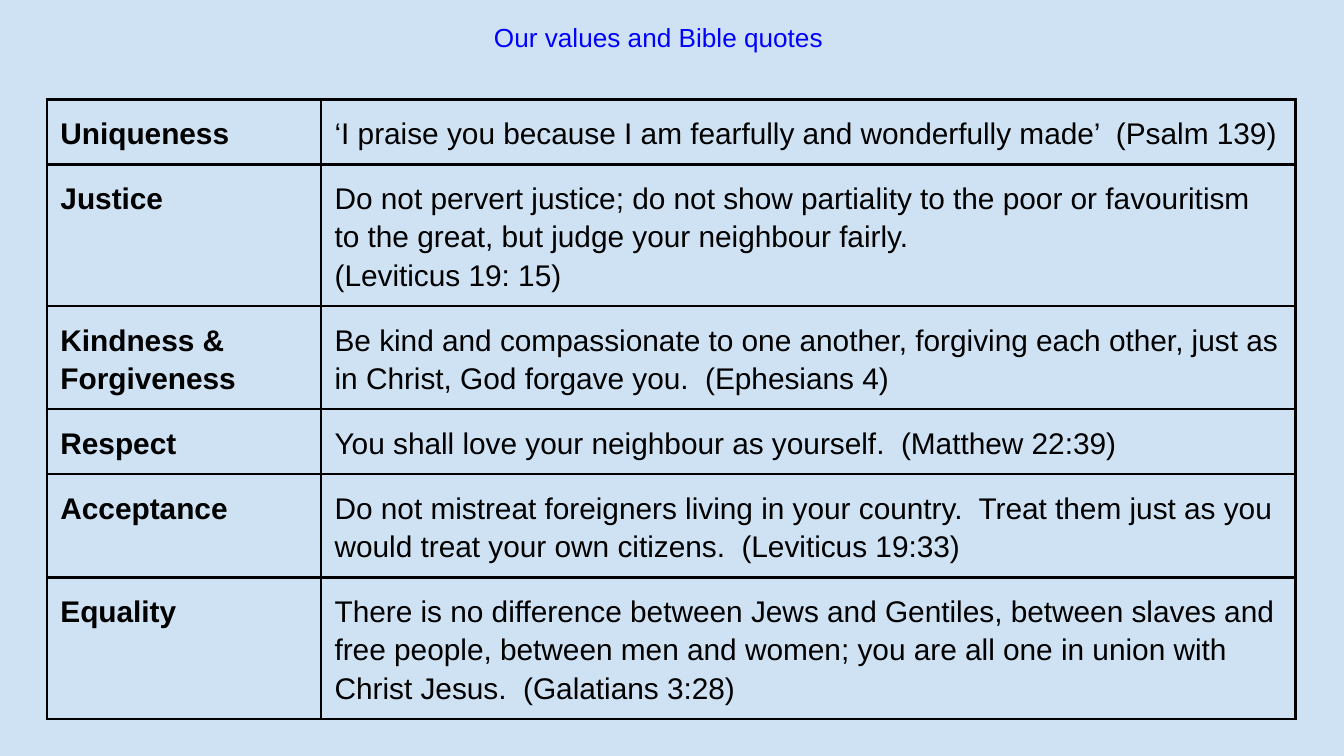
from typing import NamedTuple

from lxml import etree
from pptx import Presentation
from pptx.dml.color import RGBColor
from pptx.enum.text import MSO_ANCHOR, MSO_AUTO_SIZE, PP_ALIGN
from pptx.oxml.ns import qn
from pptx.util import Inches, Pt

TOP = MSO_ANCHOR.TOP
NO_FIT = MSO_AUTO_SIZE.NONE
CENTER = PP_ALIGN.CENTER
TITLE_ONLY = 5

FONT = "Arial"
BACKGROUND = "CFE2F3"
BLACK = "000000"
BLUE = "0000FF"
PAGE_WIDTH = 10
COLUMN_WIDTHS = (2.04, 7.25)
ROW_HEIGHT = 0.42
CELL_MARGIN = 0.1
BORDER_WIDTH = 1.5


class Value(NamedTuple):
    name: str
    quote: tuple[str, ...]


VALUES = (
    Value("Uniqueness", (
        "‘I praise you because I am fearfully and wonderfully made’  (Psalm 139)",
    )),
    Value("Justice", (
        "Do not pervert justice; do not show partiality to the poor or favouritism "
        "to the great, but judge your neighbour fairly.",
        "(Leviticus 19: 15)",
    )),
    Value("Kindness & Forgiveness", (
        "Be kind and compassionate to one another, forgiving each other, just as "
        "in Christ, God forgave you.  (Ephesians 4)",
    )),
    Value("Respect", (
        "You shall love your neighbour as yourself.  (Matthew 22:39)",
    )),
    Value("Acceptance", (
        "Do not mistreat foreigners living in your country.  Treat them just as you "
        "would treat your own citizens.  (Leviticus 19:33)",
    )),
    Value("Equality", (
        "There is no difference between Jews and Gentiles, between slaves and "
        "free people, between men and women; you are all one in union with "
        "Christ Jesus.  (Galatians 3:28)",
    )),
)


def color(value: str) -> RGBColor:
    return RGBColor.from_string(value)


def add_span(para, text: str, size: float, ink: str, bold: bool = False) -> None:
    span = para.add_run()
    span.text = text
    span.font.name = FONT
    span.font.size = Pt(size)
    span.font.bold = bold
    span.font.color.rgb = color(ink)


def add_borders(cell) -> None:
    properties = cell._tc.get_or_add_tcPr()
    for index, side in enumerate(("a:lnL", "a:lnR", "a:lnT", "a:lnB")):
        line = etree.Element(qn(side), w=str(Pt(BORDER_WIDTH)))
        fill = etree.SubElement(line, qn("a:solidFill"))
        etree.SubElement(fill, qn("a:srgbClr"), val=BLACK)
        properties.insert(index, line)


def fill_cell(cell, lines: tuple[str, ...], bold: bool) -> None:
    cell.fill.background()
    cell.vertical_anchor = TOP
    cell.margin_left = cell.margin_right = Inches(CELL_MARGIN)
    cell.margin_top = cell.margin_bottom = Inches(CELL_MARGIN)
    frame = cell.text_frame
    for index, text in enumerate(lines):
        para = frame.add_paragraph() if index else frame.paragraphs[0]
        para.line_spacing = 1.15
        add_span(para, text, 16, BLACK, bold)
    add_borders(cell)


def add_title(page, text: str) -> None:
    box = page.shapes.title
    box.left, box.top = Inches(2.29), Inches(0.11)
    box.width, box.height = Inches(5.22), Inches(0.52)
    frame = box.text_frame
    frame.word_wrap = True
    frame.auto_size = NO_FIT
    frame.vertical_anchor = TOP
    frame.margin_top = Inches(0.05)
    para = frame.paragraphs[0]
    para.alignment = CENTER
    add_span(para, text, 14, BLUE)


def add_values_table(page, values: tuple[Value, ...]) -> None:
    frame = page.shapes.add_table(
        len(values), len(COLUMN_WIDTHS), Inches(0.35), Inches(0.74),
        Inches(sum(COLUMN_WIDTHS)), Inches(ROW_HEIGHT * len(values)),
    )
    table = frame.table
    table.first_row = False
    table.horz_banding = False
    for column, width in zip(table.columns, COLUMN_WIDTHS):
        column.width = Inches(width)
    for row, value in zip(table.rows, values):
        row.height = Inches(ROW_HEIGHT)
        fill_cell(row.cells[0], (value.name,), True)
        fill_cell(row.cells[1], value.quote, False)


def main() -> None:
    deck = Presentation()
    deck.slide_width = Inches(PAGE_WIDTH)
    deck.slide_height = Inches(PAGE_WIDTH * 9 / 16)
    page = deck.slides.add_slide(deck.slide_layouts[TITLE_ONLY])
    page.background.fill.solid()
    page.background.fill.fore_color.rgb = color(BACKGROUND)
    add_values_table(page, VALUES)
    add_title(page, "Our values and Bible quotes")
    deck.save("out.pptx")


if __name__ == "__main__":
    main()
